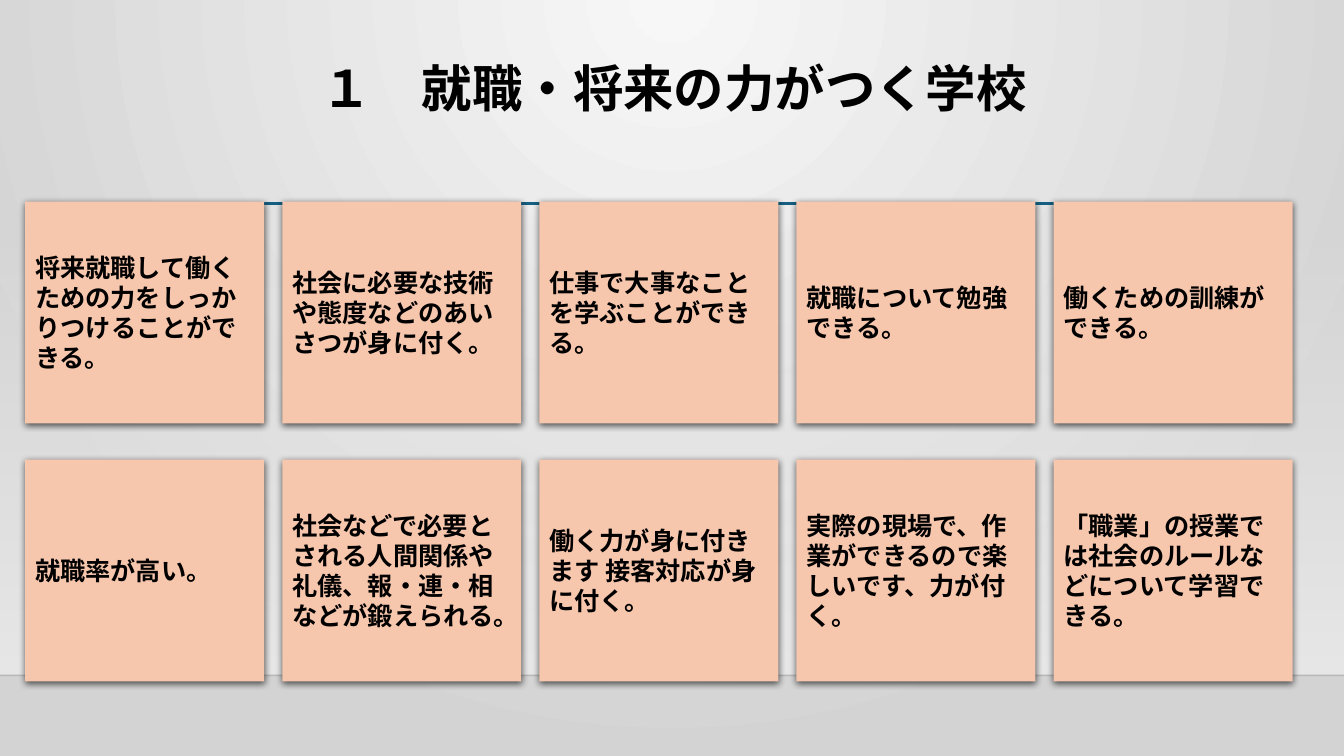
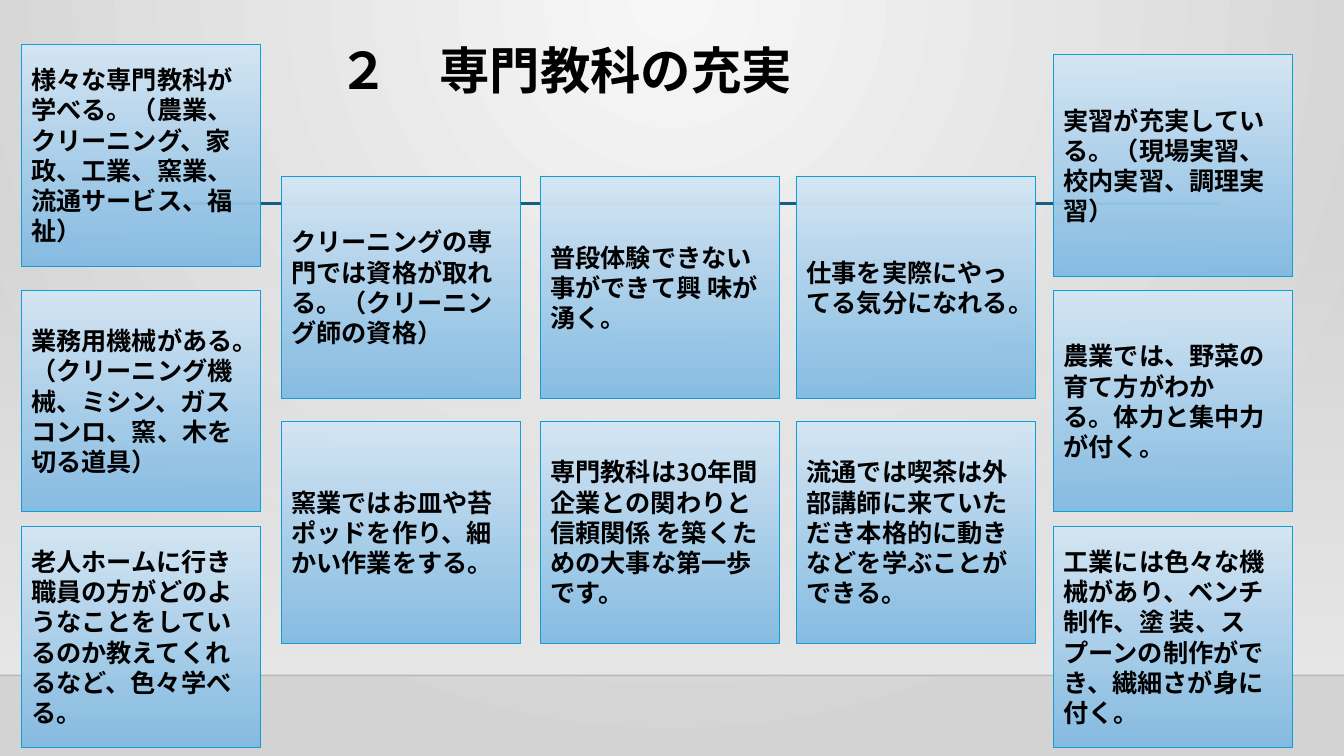
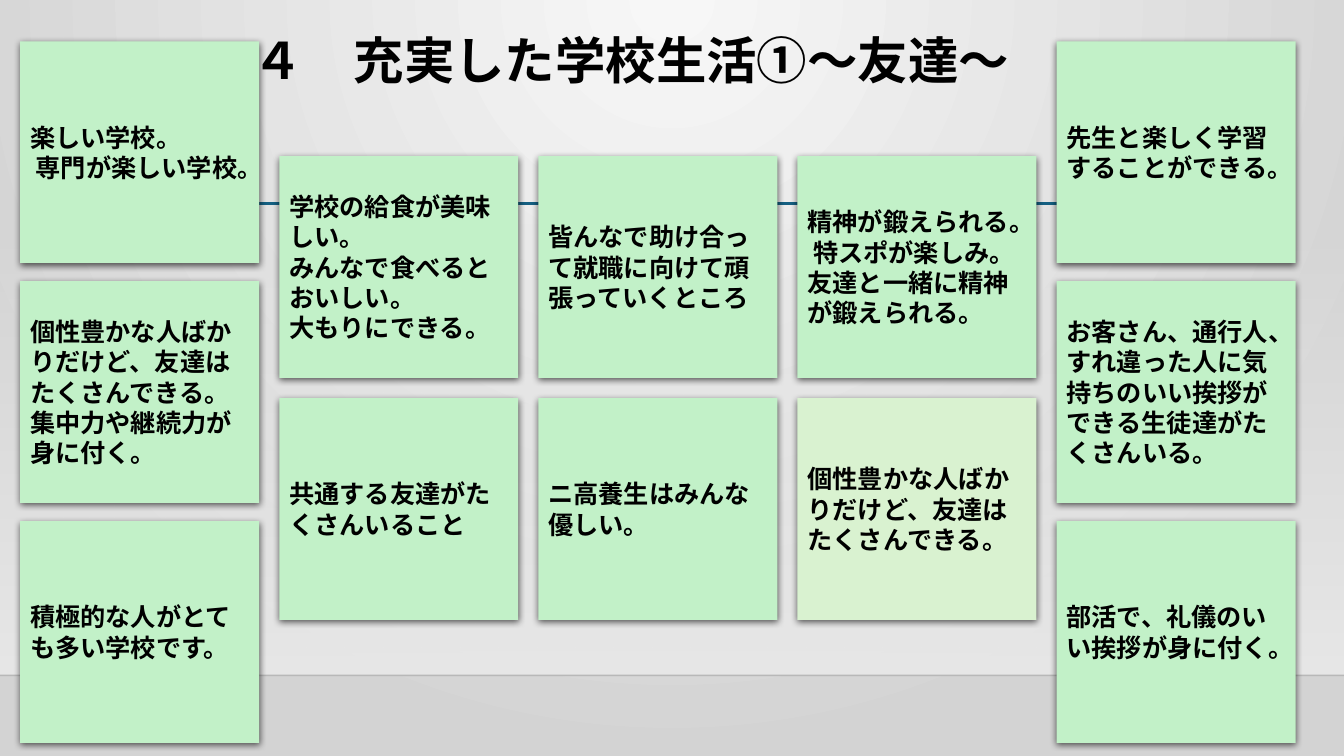
from dataclasses import dataclass

from lxml.etree import SubElement
from pptx import Presentation
from pptx.dml.color import RGBColor
from pptx.enum.lang import MSO_LANGUAGE_ID as Language
from pptx.enum.shapes import MSO_CONNECTOR as Connector, MSO_SHAPE as Shape
from pptx.enum.text import MSO_ANCHOR as Anchor, PP_ALIGN as Align
from pptx.oxml.ns import qn
from pptx.util import Inches, Pt


@dataclass(frozen=True)
class Theme:
    font: str = "Cabin"
    title_size: int = 36
    card_size: int = 18
    text: str = "000000"
    backdrop: tuple = ("F7F7F7", "D3D3D3")
    floor: str = "E8E8E8"
    floor_line: str = "000001"
    rule: str = "156082"
    peach: str = "F6C6AD"
    green: str = "C2F1C8"
    light_green: str = "D9F2D0"
    blue: tuple = ("D5E6F4", "80BAE3")
    blue_line: str = "0F9ED5"


THEME = Theme()
WIDTH, HEIGHT = 13.33, 7.5
CARD_WIDTH, CARD_HEIGHT = 2.37, 2.2

CAREER_CARDS = [
    ["将来就職して働くための力をしっかりつけることができる。", "就職率が高い。"],
    ["社会に必要な技術や態度などのあいさつが身に付く。",
     "社会などで必要とされる人間関係や礼儀、報・連・相などが鍛えられる。"],
    ["仕事で大事なことを学ぶことができる。",
     "働く力が身に付きます 接客対応が身に付く。"],
    ["就職について勉強できる。",
     "実際の現場で、作業ができるので楽しいです、力が付く。"],
    ["働くための訓練ができる。",
     "「職業」の授業では社会のルールなどについて学習できる。"],
]
SUBJECT_CARDS = [
    ["様々な専門教科が学べる。（農業、クリーニング、家政、工業、窯業、流通サービス、福祉）",
     "業務用機械がある。（クリーニング機械、ミシン、ガスコンロ、窯、木を切る道具）",
     "老人ホームに行き職員の方がどのようなことをしているのか教えてくれるなど、色々学べる。"],
    ["クリーニングの専門では資格が取れる。（クリーニング師の資格）",
     "窯業ではお皿や苔ポッドを作り、細かい作業をする。"],
    ["普段体験できない事ができて興 味が湧く。",
     "専門教科は30年間企業との関わりと信頼関係 を築くための大事な第一歩です。"],
    ["仕事を実際にやってる気分になれる。",
     "流通では喫茶は外部講師に来ていただき本格的に動きなどを学ぶことができる。"],
    ["実習が充実している。（現場実習、校内実習、調理実習）",
     "農業では、野菜の育て方がわか\nる。体力と集中力が付く。",
     "工業には色々な機械があり、ベンチ制作、塗 装、スプーンの制作ができ、繊細さが身に付く。"],
]
FRIEND_CARDS = [
    ["楽しい学校。\n 専門が楽しい学校。",
     "個性豊かな人ばかりだけど、友達はたくさんできる。集中力や継続力が身に付く。",
     "積極的な人がとても多い学校です。"],
    ["学校の給食が美味しい。\nみんなで食べるとおいしい。\n大もりにできる。",
     "共通する友達がたくさんいること"],
    ["皆んなで助け合って就職に向けて頑張っていくところ",
     "ニ高養生はみんな優しい。"],
    ["精神が鍛えられる。 特スポが楽しみ。 友達と一緒に精神が鍛えられる。",
     "個性豊かな人ばかりだけど、友達はたくさんできる。"],
    ["先生と楽しく学習することができる。",
     "お客さん、通行人、すれ違った人に気持ちのいい挨拶ができる生徒達がたくさんいる。",
     "部活で、礼儀のいい挨拶が身に付く。"],
]


def rgb(value):
    return RGBColor.from_string(value)


def set_alpha(color, percent):
    SubElement(color, qn("a:alpha"), val=str(percent * 1000))


def fill_gradient(fill, colors):
    """Fill from the first colour at the top to the second at the bottom."""
    fill.gradient()
    fill.gradient_angle = 270
    for stop, color in zip(fill.gradient_stops, colors):
        stop.color.rgb = rgb(color)


def stop_colors(shape):
    return list(shape._element.spPr.iter(qn("a:srgbClr")))


def add_shadow(shape):
    effects = shape._element.spPr.find(qn("a:effectLst"))
    shadow = SubElement(effects, qn("a:outerShdw"), blurRad=str(Pt(5)),
                        dist=str(Pt(1.5)), dir="5400000", algn="t", rotWithShape="0")
    set_alpha(SubElement(shadow, qn("a:srgbClr"), val="000000"), 63)


def add_box(slide, left, top, width, height):
    box = slide.shapes.add_shape(Shape.RECTANGLE, Inches(left), Inches(top),
                                 Inches(width), Inches(height))
    box.shadow.inherit = False
    box.line.fill.background()
    return box


def add_line(slide, start, end, y, color, weight):
    line = slide.shapes.add_connector(Connector.STRAIGHT, Inches(start), Inches(y),
                                      Inches(end), Inches(y))
    line.line.color.rgb = rgb(color)
    line.line.width = Pt(weight)
    SubElement(line._element.spPr, qn("a:effectLst"))
    return line


def write(shape, text, size, align=Align.LEFT, spacing=None):
    frame = shape.text_frame
    frame.word_wrap = True
    frame.vertical_anchor = Anchor.MIDDLE
    frame.text = text
    for para in frame.paragraphs:
        para.alignment = align
        para.line_spacing = spacing
        for span in para.runs:
            font = span.font
            font.name, font.size, font.bold = THEME.font, Pt(size), True
            font.color.rgb = rgb(THEME.text)
            font.language_id = Language.JAPANESE
            SubElement(span._r.get_or_add_rPr(), qn("a:ea"), typeface=THEME.font)


def add_backdrop(slide):
    fill_gradient(slide.background.fill, THEME.backdrop)
    gradient = next(slide._element.iter(qn("a:gradFill")))
    gradient.remove(gradient.find(qn("a:lin")))
    circle = SubElement(gradient, qn("a:path"), path="circle")
    SubElement(circle, qn("a:fillToRect"), l="43000", t="0", r="43000", b="100000")

    floor = add_box(slide, 0, 2.21, WIDTH, 4.49)
    fill_gradient(floor.fill, (THEME.floor, THEME.floor))
    set_alpha(stop_colors(floor)[0], 0)
    edge = add_line(slide, 0, WIDTH, 6.7, THEME.floor_line, 1)
    set_alpha(stop_colors(edge)[0], 20)
    add_line(slide, 1.59, 12.1, 2.02, THEME.rule, 2.5)


def add_title(slide, text, left, top, width=11.5, align=Align.LEFT):
    box = slide.shapes.add_textbox(Inches(left), Inches(top), Inches(width), Inches(1.45))
    write(box, text, THEME.title_size, align, 0.9)


def start_slide(deck):
    slide = deck.slides.add_slide(deck.slide_layouts[6])
    add_backdrop(slide)
    return slide


def flat_card(color):
    def paint(card):
        card.fill.solid()
        card.fill.fore_color.rgb = rgb(color)
        add_shadow(card)
    return paint


def glass_card(card):
    fill_gradient(card.fill, THEME.blue)
    set_alpha(stop_colors(card)[1], 92)
    card.line.color.rgb = rgb(THEME.blue_line)
    card.line.width = Pt(0.75)


def add_cards(slide, columns, lefts, tops, paint):
    """Draw one column of cards per left edge; tops holds each column's rows."""
    cards = []
    for texts, left, rows in zip(columns, lefts, tops):
        for text, top in zip(texts, rows):
            card = add_box(slide, left, top, CARD_WIDTH, CARD_HEIGHT)
            paint(card)
            write(card, text, THEME.card_size)
            cards.append(card)
    return cards


def even(start, step, count=5):
    return [start + step * index for index in range(count)]


def build_career(deck):
    slide = start_slide(deck)
    add_cards(slide, CAREER_CARDS, even(0.25, 2.55), [even(2, 2.56, 2)] * 5,
              flat_card(THEME.peach))
    add_title(slide, "１\u3000就職・将来の力がつく学校".replace("\u3000", "　"),
              0.25, 0.18, 12.87, Align.CENTER)


def build_subjects(deck):
    slide = start_slide(deck)
    middle = even(1.75, 2.43, 2)
    tops = [(0.44, 2.88, 5.22), middle, middle, middle, even(0.54, 2.34, 3)]
    add_cards(slide, SUBJECT_CARDS, (0.21, 2.79, 5.36, 7.9, 10.45), tops, glass_card)
    add_title(slide, "２　専門教科の充実", 3.26, 0)


def build_friends(deck):
    slide = start_slide(deck)
    outer, middle = even(0.41, 2.38, 3), even(1.55, 2.4, 2)
    cards = add_cards(slide, FRIEND_CARDS, even(0.2, 2.57),
                      [outer, middle, middle, middle, outer], flat_card(THEME.green))
    many_friends = cards[8]
    many_friends.fill.fore_color.rgb = rgb(THEME.light_green)
    add_title(slide, "４　充実した学校生活①～友達～", 2.41, -0.1)


def main():
    deck = Presentation()
    deck.slide_width, deck.slide_height = Inches(WIDTH), Inches(HEIGHT)
    build_career(deck)
    build_subjects(deck)
    build_friends(deck)
    deck.save("out.pptx")


if __name__ == "__main__":
    main()
